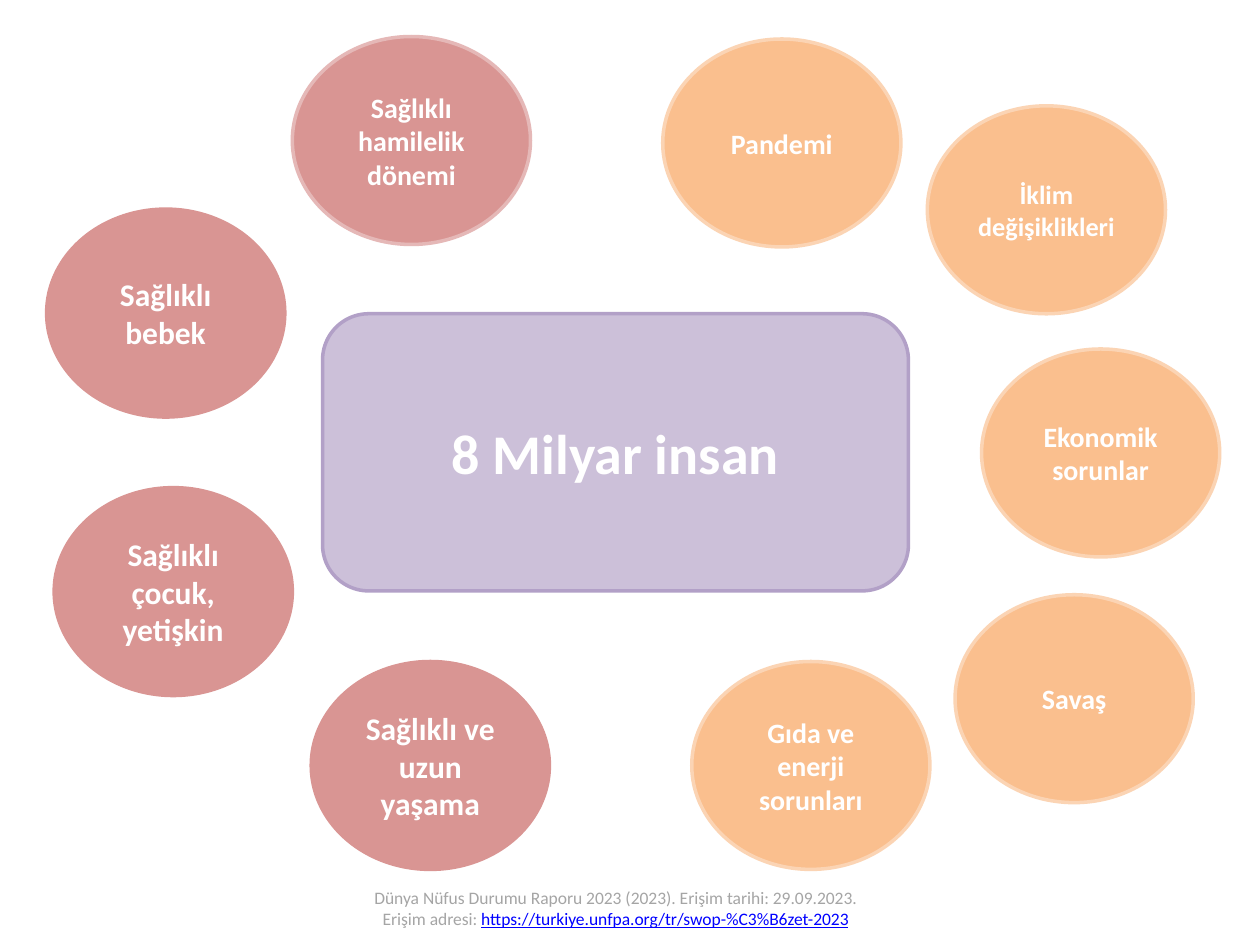
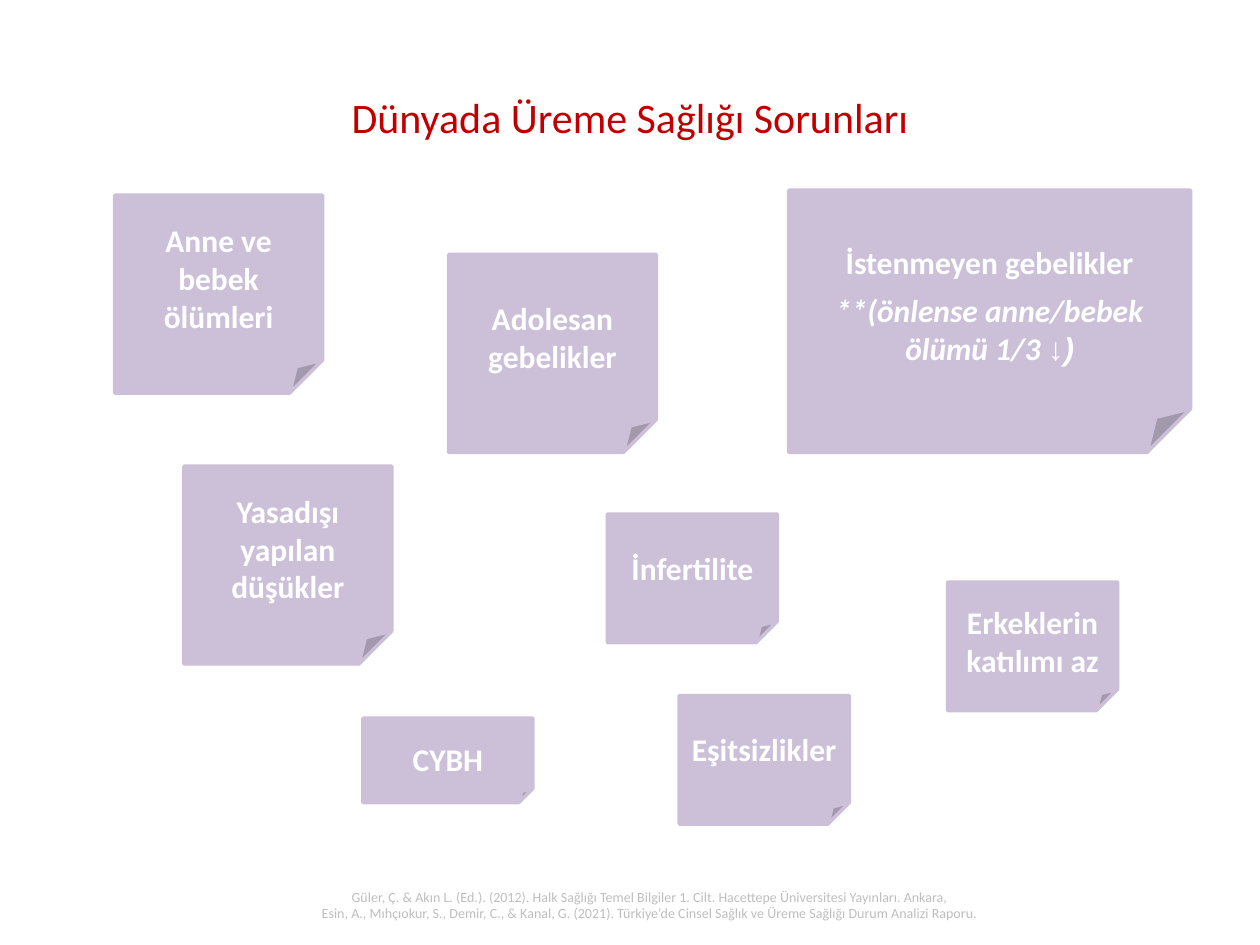
from dataclasses import dataclass

from pptx import Presentation
from pptx.dml.color import RGBColor
from pptx.enum.shapes import MSO_SHAPE as Shape
from pptx.enum.text import MSO_ANCHOR as Anchor, PP_ALIGN as Align
from pptx.util import Inches, Pt


@dataclass(frozen=True)
class Theme:
    font: str = "Calibri"
    symbol_font: str = "Arial"
    white: str = "FFFFFF"
    lilac: str = "CCC0D9"
    lilac_edge: str = "B2A0C7"
    rose: str = "D99593"
    rose_edge: str = "E5B8B7"
    peach: str = "FABF8E"
    peach_edge: str = "FBD4B4"
    title_red: str = "C00000"
    source_grey: str = "A5A5A5"
    source_pale: str = "BFBFBF"
    address_blue: str = "0000FF"
    hero_size: int = 32
    title_size: int = 24
    label_size: int = 18
    small_label_size: int = 16
    tight_label_size: int = 15
    edge_width: int = 2


THEME = Theme()
SLIDE_BOX = (0, 0, 10, 7.5)
TITLE_ONLY, BLANK = 5, 6
BUBBLE_SIZE = (1.89, 1.65)
LARGE_NOTE, SMALL_NOTE = (1.65, 1.57), (1.35, 1.02)

# Left, top, text, size, edge
HEALTH_GOALS = [
    (2.32, 0.29, ["Sağlıklı hamilelik", "dönemi"], THEME.small_label_size, THEME.rose_edge),
    (0.37, 1.66, ["Sağlıklı bebek"], THEME.label_size, THEME.rose),
    (0.43, 3.87, ["Sağlıklı çocuk, yetişkin"], THEME.label_size, THEME.rose),
    (2.47, 5.25, ["Sağlıklı ve uzun yaşama"], THEME.label_size, THEME.rose),
]
WORLD_PROBLEMS = [
    (5.26, 0.31, ["Pandemi"], THEME.small_label_size, THEME.peach_edge),
    (7.36, 0.84, ["İklim değişiklikleri"], THEME.tight_label_size, THEME.peach_edge),
    (7.79, 2.77, ["Ekonomik sorunlar"], THEME.small_label_size, THEME.peach_edge),
    (7.58, 4.72, ["Savaş"], THEME.small_label_size, THEME.peach_edge),
    (5.49, 5.25, ["Gıda ve enerji sorunları"], THEME.small_label_size, THEME.peach_edge),
]
# Left, top, size, text, extra top inset that lowers the text
NOTES = [
    (0.91, 1.55, LARGE_NOTE, "Anne ve bebek ölümleri", 0),
    (1.46, 3.70, LARGE_NOTE, "Yasadışı yapılan düşükler", 0),
    (3.56, 2.02, LARGE_NOTE, "Adolesan gebelikler", 0),
    (4.82, 4.08, SMALL_NOTE, "İnfertilite", 0),
    (7.52, 4.62, SMALL_NOTE, "Erkeklerin katılımı az", 0.08),
    (5.39, 5.52, SMALL_NOTE, "Eşitsizlikler", 0),
    (2.88, 5.70, (1.35, 0.67), "CYBH", 0.08),
    (6.26, 1.51, (3.19, 2.08), "İstenmeyen gebelikler", 0.08),
]


def within(box, left, top, size):
    """Place a part of the given size relative to a region's corner."""
    return (box[0] + left, box[1] + top, *size)


def style(paragraph, size, color, bold=False):
    paragraph.alignment = Align.CENTER
    font = paragraph.font
    font.name, font.size, font.bold = THEME.font, Pt(size), bold
    font.color.rgb = RGBColor.from_string(color)


def add_label(slide, kind, box, lines, size, fill, edge):
    """Filled shape with bold white centred text."""
    label = slide.shapes.add_shape(kind, *map(Inches, box))
    label.shadow.inherit = False
    label.fill.solid()
    label.fill.fore_color.rgb = RGBColor.from_string(fill)
    label.line.color.rgb = RGBColor.from_string(edge)
    label.line.width = Pt(THEME.edge_width)
    frame = label.text_frame
    frame.word_wrap = True
    frame.vertical_anchor = Anchor.MIDDLE
    frame.text = "\n".join(lines)
    for paragraph in frame.paragraphs:
        style(paragraph, size, THEME.white, bold=True)
    return frame


def add_source(slide, box, lines, size, color):
    """Source reference at the foot of a slide."""
    frame = slide.shapes.add_textbox(*map(Inches, box)).text_frame
    frame.word_wrap = True
    frame.text = "\n".join(lines)
    for paragraph in frame.paragraphs:
        style(paragraph, size, color)
    return frame


def add_bubbles(slide, box, bubbles, fill):
    for left, top, lines, size, edge in bubbles:
        add_label(slide, Shape.OVAL, within(box, left, top, BUBBLE_SIZE),
                  lines, size, fill, edge)


def add_notes(slide, box):
    for left, top, size, text, drop in NOTES:
        frame = add_label(slide, Shape.FOLDED_CORNER, within(box, left, top, size),
                          [text], THEME.label_size, THEME.lilac, THEME.lilac)
        frame.margin_top = Inches(0.05 + drop)
        if size[0] == SMALL_NOTE[0]:
            frame.margin_left = frame.margin_right = Inches(0.05)
    # The last note carries a remark in italics
    remark = frame.add_paragraph()
    style(remark, THEME.label_size, THEME.white, bold=True)
    remark.space_before = Pt(5.9)
    remark.font.italic = True
    remark.add_run().text = "**(önlense anne/bebek ölümü 1/3 "
    arrow = remark.add_run()
    arrow.text = "↓)"
    arrow.font.name = THEME.symbol_font


def build_population_slide(prs, box):
    slide = prs.slides.add_slide(prs.slide_layouts[BLANK])
    add_label(slide, Shape.ROUNDED_RECTANGLE, within(box, 2.56, 2.49, (4.65, 2.2)),
              ["8 Milyar insan"], THEME.hero_size, THEME.lilac, THEME.lilac_edge)
    source = add_source(
        slide, within(box, 2.76, 6.99, (4.25, 0.44)),
        ["Dünya Nüfus Durumu Raporu 2023 (2023). Erişim tarihi: 29.09.2023. Erişim adresi: "],
        10, THEME.source_grey)
    address = source.paragraphs[0].add_run()
    address.text = "https://turkiye.unfpa.org/tr/swop-%C3%B6zet-2023"
    address.font.underline = True
    address.font.color.rgb = RGBColor.from_string(THEME.address_blue)
    add_bubbles(slide, box, HEALTH_GOALS, THEME.rose)
    add_bubbles(slide, box, WORLD_PROBLEMS, THEME.peach)


def build_problems_slide(prs, box):
    slide = prs.slides.add_slide(prs.slide_layouts[TITLE_ONLY])
    title = slide.shapes.title
    title.left, title.top, title.width, title.height = map(
        Inches, within(box, 0.5, 0.3, (9, 1.25)))
    title.text_frame.text = "Dünyada Üreme Sağlığı Sorunları"
    title.text_frame.vertical_anchor = Anchor.MIDDLE
    style(title.text_frame.paragraphs[0], THEME.title_size, THEME.title_red)
    add_source(
        slide, within(box, 1.89, 7, (6.54, 0.5)),
        ["Güler, Ç. & Akın L. (Ed.). (2012). Halk Sağlığı Temel Bilgiler 1. Cilt. "
         "Hacettepe Üniversitesi Yayınları. Ankara,",
         "Esin, A., Mıhçıokur, S., Demir, C., & Kanal, G. (2021). Türkiye’de Cinsel Sağlık "
         "ve Üreme Sağlığı Durum Analizi Raporu."],
        8, THEME.source_pale)
    add_notes(slide, box)


def main():
    prs = Presentation()
    prs.slide_width, prs.slide_height = map(Inches, SLIDE_BOX[2:])
    build_population_slide(prs, SLIDE_BOX)
    build_problems_slide(prs, SLIDE_BOX)
    prs.save("out.pptx")


if __name__ == "__main__":
    main()
